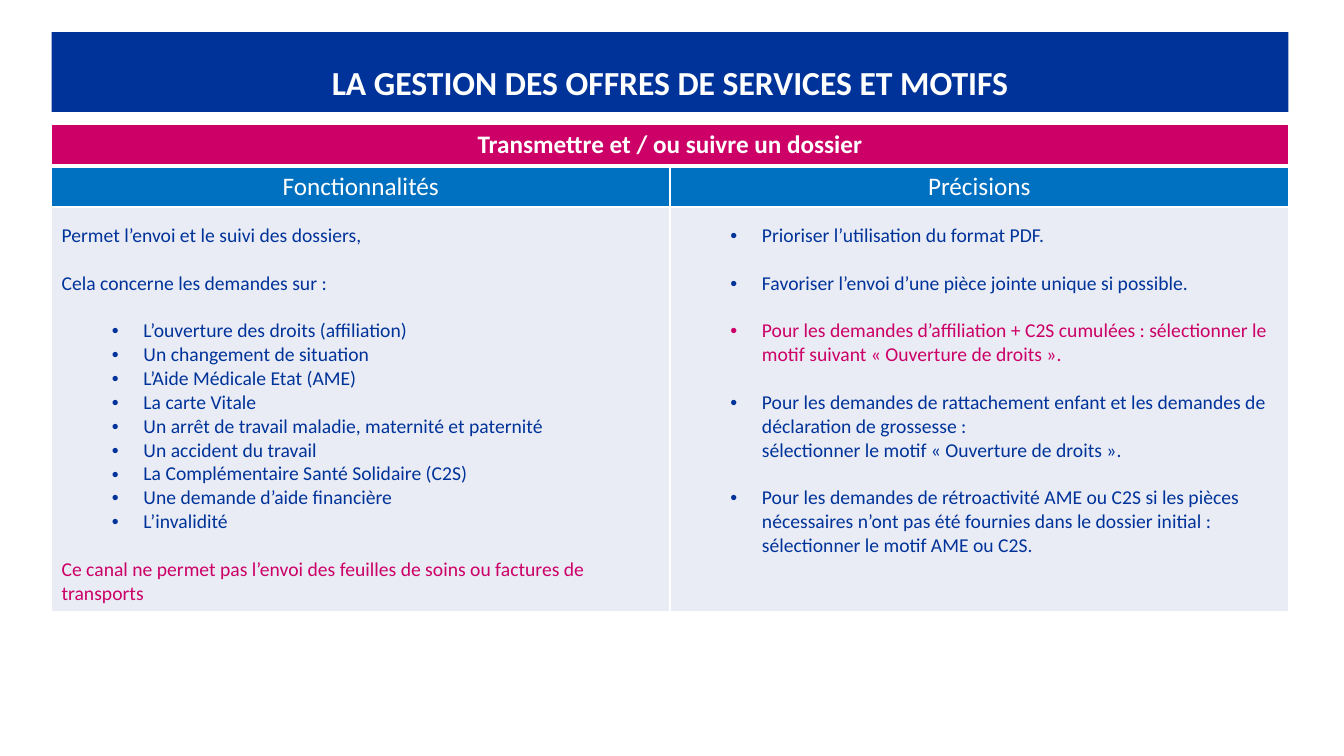
"""Build the slide on managing service offers and motives."""
from lxml import etree
from pptx import Presentation
from pptx import util as u
from pptx.dml.color import RGBColor
from pptx.enum import shapes, text
from pptx.oxml.ns import qn

Pt = u.Pt
NAVY, PINK, BLUE, PALE, WHITE = "003399", "CC0066", "0070C0", "E9EBF5", "FFFFFF"
LEFT, WIDE = 36.8, 883.6
GAP = 17


def color(code):
    return RGBColor.from_string(code)


def style(para, size, code, bold=False):
    font = para.font
    font.name, font.size, font.bold = "Calibri", Pt(size), bold
    font.color.rgb = color(code)


deck = Presentation()
deck.slide_width, deck.slide_height = Pt(960), Pt(540)
slide = deck.slides.add_slide(deck.slide_layouts[6])

band = slide.shapes.add_shape(shapes.MSO_SHAPE.RECTANGLE, Pt(LEFT), Pt(23), Pt(WIDE), Pt(57))
band.shadow.inherit = False
band.fill.solid()
band.fill.fore_color.rgb = color(NAVY)
band.line.fill.background()
band.text_frame.vertical_anchor = text.MSO_ANCHOR.MIDDLE
title = band.text_frame.paragraphs[0]
title.text = "LA GESTION DES OFFRES DE SERVICES ET MOTIFS"
title.alignment = text.PP_ALIGN.CENTER
title.line_spacing = 1.5
style(title, 24, WHITE, True)

table = slide.shapes.add_table(3, 2, Pt(LEFT), Pt(88.6), Pt(WIDE), Pt(348)).table
table.first_row = table.horz_banding = False
for row, high in zip(table.rows, (30, 29.2, 288.8)):
    row.height = Pt(high)

for r, fill in enumerate((PINK, BLUE, PALE)):
    for cell in table.rows[r].cells:
        cell.fill.solid()
        cell.fill.fore_color.rgb = color(fill)
        props = cell._tc.get_or_add_tcPr()
        for i, side in enumerate("LRTB"):
            thick = 3 if (r, side) in ((0, "B"), (1, "T")) else 1
            edge = etree.Element(qn("a:ln" + side), w=str(Pt(thick)))
            paint = etree.SubElement(edge, qn("a:solidFill"))
            etree.SubElement(paint, qn("a:srgbClr"), val=WHITE)
            props.insert(i, edge)
table.cell(0, 0).merge(table.cell(0, 1))

heads = [(0, 0, "Transmettre et / ou suivre un dossier", True),
         (1, 0, "Fonctionnalités", False), (1, 1, "Précisions", False)]
for r, c, words, bold in heads:
    para = table.cell(r, c).text_frame.paragraphs[0]
    para.text = words
    para.alignment = text.PP_ALIGN.CENTER
    style(para, 18, WHITE, bold)

topics = ["L’ouverture des droits (affiliation)", "Un changement de situation",
          "L’Aide Médicale Etat (AME)", "La carte Vitale",
          "Un arrêt de travail maladie, maternité et paternité",
          "Un accident du travail", "La Complémentaire Santé Solidaire (C2S)",
          "Une demande d’aide financière", "L’invalidité"]
uses = [("Permet l’envoi et le suivi des dossiers,", "plain", 0, NAVY),
        ("Cela concerne les demandes sur :", "plain", GAP, NAVY)]
uses += [(topic, "bullet", 0 if i else GAP, NAVY) for i, topic in enumerate(topics)]
uses.append(("Ce canal ne permet pas l’envoi des feuilles de soins ou factures de transports",
             "plain", GAP, PINK))
notes = [
    ("Prioriser l’utilisation du format PDF.", "bullet", 0, NAVY),
    ("Favoriser l’envoi d’une pièce jointe unique si possible.", "bullet", GAP, NAVY),
    ("Pour les demandes d’affiliation + C2S cumulées : sélectionner le motif suivant "
     "« Ouverture de droits ».", "bullet", GAP, PINK),
    ("Pour les demandes de rattachement enfant et les demandes de déclaration de "
     "grossesse :", "bullet", GAP, NAVY),
    ("sélectionner le motif « Ouverture de droits ».", "indent", 0, NAVY),
    ("Pour les demandes de rétroactivité AME ou C2S si les pièces nécessaires n’ont pas "
     "été fournies dans le dossier initial : sélectionner le motif AME ou C2S.",
     "bullet", GAP, NAVY)]

for c, items in enumerate((uses, notes)):
    frame = table.cell(2, c).text_frame
    for i, (words, kind, gap, code) in enumerate(items):
        para = frame.add_paragraph() if i else frame.paragraphs[0]
        para.text = words
        props = para._p.get_or_add_pPr()
        if kind != "plain":
            props.set("marL", str(Pt(58.5)))
            props.set("indent", str(Pt(-22.5 if kind == "bullet" else 0)))
        if kind == "bullet":
            etree.SubElement(props, qn("a:buFont"), typeface="Arial")
            etree.SubElement(props, qn("a:buChar"), char="•")
        if gap:
            para.space_before = Pt(gap)
        if i == 0:
            para.line_spacing = 1.5
        style(para, 14, code)

deck.save("out.pptx")
